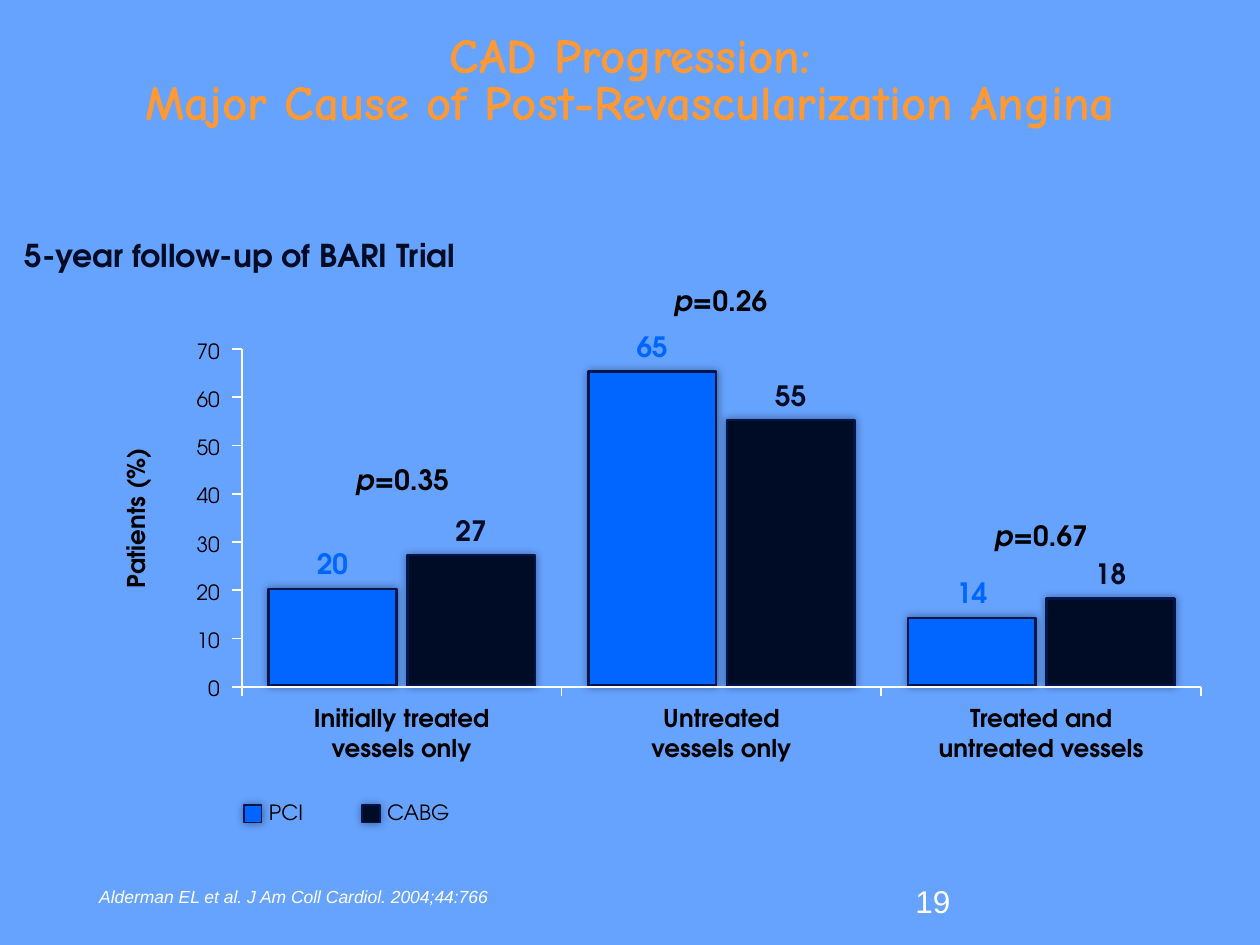
"""Build the slide on CAD progression after revascularization."""
import lxml.etree
import pptx
import pptx.dml.color
import pptx.enum.shapes
import pptx.enum.text
import pptx.oxml.ns
import pptx.util

Pt = pptx.util.Pt
qn = pptx.oxml.ns.qn
ALIGN = pptx.enum.text.PP_ALIGN
ANCHOR = pptx.enum.text.MSO_ANCHOR
FIT = pptx.enum.text.MSO_AUTO_SIZE

COLORS = {
    "background": "66A3FF",
    "title": "FF9933",
    "text": "000000",
    "light": "FFFFFF",
    "PCI": "0066FF",
    "CABG": "000B26",
    "outline": "00164C",
}
BODY = "TeX Gyre Adventor"
ARMS = ("PCI", "CABG")
OUTCOMES = [
    (("Initially treated", "vessels only"), (20, 27)),
    (("Untreated", "vessels only"), (65, 55)),
    (("Treated and", "untreated vessels"), (14, 18)),
]
P_VALUES = [("0.35", 230, 260.6), ("0.26", 411.8, 158.4), ("0.67", 595, 293)]

AXIS_LEFT, AXIS_TOP, BASELINE = 138.2, 199.4, 392.4
SCALE_MAX, SCALE_STEP = 70, 10
UNIT = (BASELINE - AXIS_TOP) / SCALE_MAX
GROUP_WIDTH = 182.7
BAR_WIDTH, BAR_PITCH, BAR_INDENT = 73, 79.2, 15.3
BAR_FOOT = BASELINE - 0.7
TICK = 5.5


def rgb(name):
    return pptx.dml.color.RGBColor.from_string(COLORS[name])


def write(paragraph, text, size=12, color="text", name=BODY, bold=False, italic=False):
    """Append text to a paragraph, with line breaks, in the given format."""
    for number, line in enumerate(text.split("\n")):
        if number:
            paragraph.add_line_break()
        run = paragraph.add_run()
        run.text = line
        font = run.font
        font.size, font.name, font.bold, font.italic = Pt(size), name, bold, italic
        font.color.rgb = rgb(color)


class SlideBuilder:
    """Hold the presentation style and the current slide."""

    def __init__(self):
        self.deck = pptx.Presentation()
        self.deck.slide_width, self.deck.slide_height = Pt(720), Pt(540)
        self.slide = self.deck.slides.add_slide(self.deck.slide_layouts[5])
        fill = self.slide.background.fill
        fill.solid()
        fill.fore_color.rgb = rgb("background")

    def title(self, text, left, top, width, height):
        heading = self.slide.shapes.title
        heading.left, heading.top = Pt(left), Pt(top)
        heading.width, heading.height = Pt(width), Pt(height)
        frame = heading.text_frame
        frame.auto_size, frame.word_wrap = FIT.NONE, True
        frame.vertical_anchor = ANCHOR.BOTTOM
        paragraph = frame.paragraphs[0]
        paragraph.alignment, paragraph.line_spacing = ALIGN.CENTER, 0.8
        write(paragraph, text, size=28, color="title", name="Comic Neue", bold=True)

    def text(self, left, top, width, height, runs, align=ALIGN.LEFT, anchor=ANCHOR.TOP,
             insets=(7.2, 3.6), spacing=None, wrap=True):
        box = self.slide.shapes.add_textbox(Pt(left), Pt(top), Pt(width), Pt(height))
        frame = box.text_frame
        frame.word_wrap, frame.vertical_anchor = wrap, anchor
        frame.margin_left = frame.margin_right = Pt(insets[0])
        frame.margin_top = frame.margin_bottom = Pt(insets[1])
        paragraph = frame.paragraphs[0]
        paragraph.alignment, paragraph.line_spacing = align, spacing
        for content, style in runs:
            write(paragraph, content, **style)
        return box

    def label(self, left, top, width, height, text, align=ALIGN.CENTER,
              anchor=ANCHOR.MIDDLE, **style):
        return self.text(left, top, width, height, [(text, style)], align=align,
                         anchor=anchor, insets=(0, 0), wrap=False)

    def line(self, x1, y1, x2, y2):
        line = self.slide.shapes.add_connector(
            pptx.enum.shapes.MSO_CONNECTOR.STRAIGHT, Pt(x1), Pt(y1), Pt(x2), Pt(y2))
        line.line.color.rgb, line.line.width = rgb("light"), Pt(1)
        lxml.etree.SubElement(line._element.spPr, qn("a:effectLst"))

    def box(self, left, top, width, height, color, outline=1.5):
        box = self.slide.shapes.add_shape(
            pptx.enum.shapes.MSO_SHAPE.RECTANGLE, Pt(left), Pt(top), Pt(width), Pt(height))
        box.fill.solid()
        box.fill.fore_color.rgb = rgb(color)
        box.line.color.rgb, box.line.width = rgb("outline"), Pt(outline)
        box.shadow.inherit = False
        effects = box._element.spPr.find(qn("a:effectLst"))
        shadow = lxml.etree.SubElement(effects, qn("a:outerShdw"), blurRad=str(Pt(5)), dist="0")
        tint = lxml.etree.SubElement(shadow, qn("a:srgbClr"), val=COLORS["text"])
        lxml.etree.SubElement(tint, qn("a:alpha"), val="40000")

    def value_axis(self):
        self.line(AXIS_LEFT, AXIS_TOP, AXIS_LEFT, BASELINE)
        for percent in range(0, SCALE_MAX + 1, SCALE_STEP):
            level = BASELINE - percent * UNIT
            self.line(AXIS_LEFT - TICK, level, AXIS_LEFT, level)
            digits = len(str(percent))
            self.label(125.6 - 9 * digits, level - 8.6, 9 * digits, 19.4, str(percent),
                       align=ALIGN.RIGHT)
        caption = self.label(36, 287.3, 83.5, 17.3, "Patients (%) ", anchor=ANCHOR.TOP,
                             size=14, bold=True)
        caption.rotation = 270

    def outcome(self, left, names, patients):
        for number, (arm, percent) in enumerate(zip(ARMS, patients)):
            bar_left = left + BAR_INDENT + number * BAR_PITCH
            bar_top = BAR_FOOT - percent * UNIT
            self.box(bar_left, bar_top, BAR_WIDTH, BAR_FOOT - bar_top, arm)
            self.label(bar_left + BAR_WIDTH / 2 - 9, bar_top - 24, 18, 19.4, str(percent),
                       anchor=ANCHOR.TOP, size=16, color=arm, bold=True)
        for number, name in enumerate(names):
            self.label(left + GROUP_WIDTH / 2 - 60, 400.3 + 17.3 * number, 120, 19.4, name,
                       size=14, bold=True)

    def legend(self, left, top, pitch):
        for number, arm in enumerate(ARMS):
            key_left = left + number * pitch
            self.box(key_left, top, 10, 10, arm, outline=1)
            self.label(key_left + 14.2, top - 2.9, 9 * len(arm), 14.4, arm,
                       align=ALIGN.LEFT, anchor=ANCHOR.TOP)


def main():
    builder = SlideBuilder()
    builder.title("CAD Progression:\nMajor Cause of Post-Revascularization Angina",
                  14, 3.8, 692, 74)
    builder.text(14, 134, 330, 26.6,
                 [("5-year follow-up of BARI Trial", dict(size=18, color="CABG", bold=True))],
                 insets=(0, 3.6), spacing=0.9)
    builder.value_axis()
    for number in range(len(OUTCOMES) + 1):
        boundary = AXIS_LEFT + number * GROUP_WIDTH
        builder.line(boundary, BASELINE + TICK, boundary, BASELINE)
    for number, (names, patients) in enumerate(OUTCOMES):
        builder.outcome(AXIS_LEFT + number * GROUP_WIDTH, names, patients)
    builder.line(AXIS_LEFT, BASELINE, AXIS_LEFT + len(OUTCOMES) * GROUP_WIDTH, BASELINE)
    builder.legend(139.5, 460, 67.5)
    for value, center, top in P_VALUES:
        builder.text(center - 50, top, 100, 26.6,
                     [("p", dict(size=16, bold=True, italic=True)),
                      (f"={value}", dict(size=16, bold=True))], align=ALIGN.CENTER)
    builder.text(516, 500.4, 168, 29, [("19", dict(size=18, color="light", name="Arial"))])
    builder.text(53.7, 497, 629, 24.5,
                 [("Alderman EL et al. J Am Coll Cardiol. 2004;44:766",
                   dict(size=10, color="light", name="Arial", italic=True))],
                 anchor=ANCHOR.BOTTOM, insets=(3, 3))
    builder.deck.save("out.pptx")


if __name__ == "__main__":
    main()
